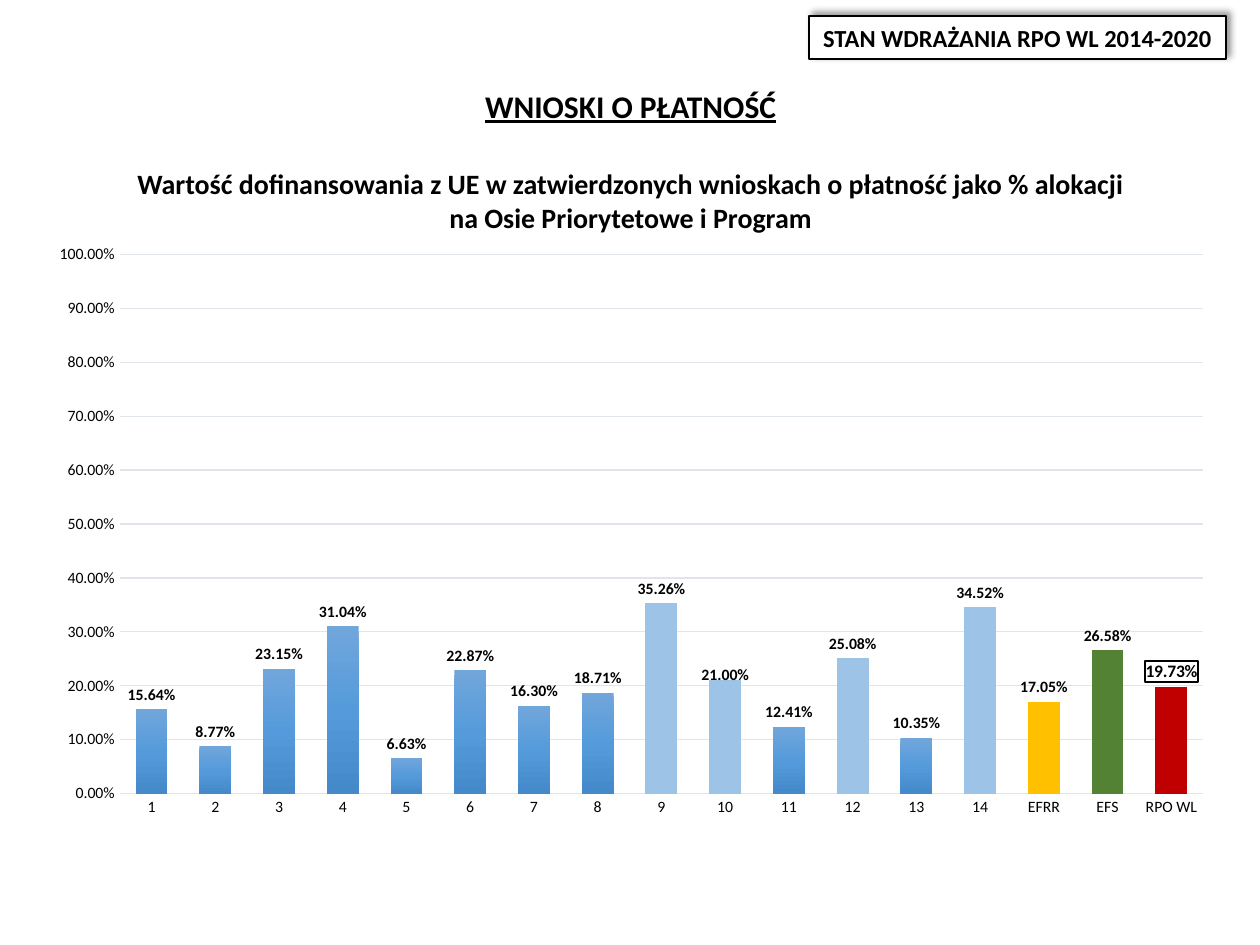
from copy import deepcopy

from lxml import etree
from pptx import Presentation
from pptx.chart.data import CategoryChartData
from pptx.dml.color import RGBColor
from pptx.enum import chart as charts, shapes, text
from pptx.oxml import parse_xml
from pptx.oxml.ns import nsdecls, qn
from pptx.util import Inches, Pt

BLACK = RGBColor(0x00, 0x00, 0x00)
WHITE = RGBColor(0xFF, 0xFF, 0xFF)
GRID = RGBColor(0xE0, 0xE5, 0xEB)
LIGHT_BLUE = RGBColor(0x9D, 0xC3, 0xE6)
AMBER = RGBColor(0xFF, 0xC0, 0x00)
GREEN = RGBColor(0x54, 0x82, 0x35)
RED = RGBColor(0xC0, 0x00, 0x00)
BAR_GRADIENT = [(0, RGBColor(0x71, 0xA6, 0xDB)),
                (0.5, RGBColor(0x55, 0x9B, 0xDB)),
                (1, RGBColor(0x44, 0x8A, 0xCA))]

FONT = "Calibri"
PERCENT = "0.00%"
PERCENTAGES = {
    "1": 15.64, "2": 8.77, "3": 23.15, "4": 31.04, "5": 6.63, "6": 22.87,
    "7": 16.3, "8": 18.71, "9": 35.26, "10": 21, "11": 12.41, "12": 25.08,
    "13": 10.35, "14": 34.52, "EFRR": 17.05, "EFS": 26.58, "RPO WL": 19.73,
}
BAR_COLORS = {**dict.fromkeys(("9", "10", "12", "14"), LIGHT_BLUE),
              "EFRR": AMBER, "EFS": GREEN, "RPO WL": RED}

CHART_BOX = (0.28, 1.86, 9.45, 4.72)
PLOT_BOX = (0.95, 2.02, 8.6, 4.28)


def set_font(font, size, **extra):
    for name, value in {"name": FONT, "size": Pt(size), **extra}.items():
        setattr(font, name, value)
    font.color.rgb = BLACK


def add_line(para, words, size, **extra):
    para.alignment = text.PP_ALIGN.CENTER
    for index, part in enumerate(words.split("\n")):
        if index:
            para.add_line_break()
        span = para.add_run()
        span.text = part
        set_font(span.font, size, bold=True, **extra)


def add_heading(page):
    box = page.shapes.add_textbox(Inches(0.28), Inches(0.6),
                                  Inches(9.45), Inches(1.58))
    frame = box.text_frame
    frame.word_wrap = True
    title = frame.paragraphs[0]
    title.line_spacing = 1.14
    add_line(title, "WNIOSKI O PŁATNOŚĆ", 18, underline=True)
    subtitle = frame.add_paragraph()
    subtitle.space_before = Pt(24)
    add_line(subtitle, "Wartość dofinansowania z UE w zatwierdzonych wnioskach "
             "o płatność jako % alokacji\nna Osie Priorytetowe i Program", 16)


def add_badge(page):
    badge = page.shapes.add_shape(shapes.MSO_SHAPE.RECTANGLE, Inches(6.42),
                                  Inches(0.13), Inches(3.31), Inches(0.34))
    badge.fill.solid()
    badge.fill.fore_color.rgb = WHITE
    badge.line.color.rgb = BLACK
    badge.line.width = Pt(1)
    badge.shadow.inherit = False
    effects = badge._element.spPr.find(qn("a:effectLst"))
    shadow = etree.SubElement(effects, qn("a:outerShdw"), blurRad=str(Pt(4)),
                              dist=str(Pt(3)), dir=str(315 * 60000))
    color = etree.SubElement(shadow, qn("a:srgbClr"), val=str(BLACK))
    etree.SubElement(color, qn("a:alpha"), val="40000")
    badge.text_frame.word_wrap = False
    add_line(badge.text_frame.paragraphs[0],
             "STAN WDRAŻANIA RPO WL 2014-2020", 14)


def white_fill(line="<a:noFill/>", width=0):
    return parse_xml(
        f'<c:spPr {nsdecls("c", "a")}><a:solidFill><a:srgbClr val="{WHITE}"/>'
        f'</a:solidFill><a:ln w="{width}">{line}</a:ln></c:spPr>')


def manual_layout(**settings):
    layout = etree.Element(qn("c:layout"))
    manual = etree.SubElement(layout, qn("c:manualLayout"))
    for name, value in settings.items():
        etree.SubElement(manual, qn(f"c:{name}"), val=str(value))
    return layout


def place_plot(chart):
    """Fix the inner plot area, given in slide inches, within the chart."""
    left, top, width, height = CHART_BOX
    x, y, plot_width, plot_height = PLOT_BOX
    area = chart._chartSpace.chart.plotArea
    for old in area.findall(qn("c:layout")):
        area.remove(old)
    area.insert(0, manual_layout(
        layoutTarget="inner", xMode="edge", yMode="edge",
        x=(x - left) / width, y=(y - top) / height,
        w=plot_width / width, h=plot_height / height))


def style_axes(chart):
    for axis in (chart.category_axis, chart.value_axis):
        axis.major_tick_mark = axis.minor_tick_mark = charts.XL_TICK_MARK.NONE
        set_font(axis.tick_labels.font, 9)
    values = chart.value_axis
    values.minimum_scale, values.maximum_scale, values.major_unit = 0, 1, 0.1
    values.tick_labels.number_format = PERCENT
    values.tick_labels.number_format_is_linked = False
    values.format.line.fill.background()
    for part in (chart.category_axis, values.major_gridlines):
        part.format.line.color.rgb = GRID
        part.format.line.width = Pt(0.75)


def color_bars(series):
    fill = series.format.fill
    fill.gradient()
    stop_list = next(series._element.iter(qn("a:gsLst")))
    stop_list.append(deepcopy(stop_list[-1]))
    for stop, (position, color) in zip(fill.gradient_stops, BAR_GRADIENT):
        stop.position = position
        stop.color.rgb = color
    fill.gradient_angle = 270
    for index, name in enumerate(PERCENTAGES):
        if name in BAR_COLORS:
            point_fill = series.points[index].format.fill
            point_fill.solid()
            point_fill.fore_color.rgb = BAR_COLORS[name]


def special_label(series, name, size):
    """Give one bar its own label and return the label's XML element."""
    index = list(PERCENTAGES).index(name)
    label = series.points[index].data_label
    set_font(label.font, size, bold=True)
    label.position = charts.XL_LABEL_POSITION.OUTSIDE_END
    element = next(item for item in series._element.iter(qn("c:dLbl"))
                   if item.find(qn("c:idx")).get("val") == str(index))
    element.find(qn("c:txPr")).addprevious(etree.Element(
        qn("c:numFmt"), formatCode=PERCENT, sourceLinked="0"))
    return element


def label_bars(series):
    labels = series.data_labels
    labels.show_value = True
    labels.number_format = PERCENT
    labels.number_format_is_linked = False
    labels.position = charts.XL_LABEL_POSITION.OUTSIDE_END
    set_font(labels.font, 9, bold=True)
    lowered = special_label(series, "10", 9)
    lowered.find(qn("c:idx")).addnext(manual_layout(x=0, y=0.015))
    boxed = special_label(series, "RPO WL", 10)
    border = f'<a:solidFill><a:srgbClr val="{BLACK}"/></a:solidFill>'
    boxed.find(qn("c:txPr")).addprevious(white_fill(border, Pt(1)))


def add_payment_chart(page):
    data = CategoryChartData(number_format=PERCENT)
    data.categories = list(PERCENTAGES)
    data.add_series("Series 1",
                    [round(value / 100, 4) for value in PERCENTAGES.values()])
    chart = page.shapes.add_chart(charts.XL_CHART_TYPE.COLUMN_CLUSTERED,
                                  *map(Inches, CHART_BOX), data).chart
    chart.has_legend = chart.has_title = False
    set_font(chart.font, 10)
    chart._chartSpace.find(qn("c:txPr")).addprevious(white_fill())
    plot = chart.plots[0]
    plot.gap_width, plot.overlap, plot.vary_by_categories = 100, -24, False
    place_plot(chart)
    style_axes(chart)
    color_bars(plot.series[0])
    label_bars(plot.series[0])


def main():
    deck = Presentation()
    deck.slide_width, deck.slide_height = Inches(10), Inches(7.5)
    page = deck.slides.add_slide(deck.slide_layouts[6])
    add_heading(page)
    add_badge(page)
    add_payment_chart(page)
    deck.save("out.pptx")


if __name__ == "__main__":
    main()
